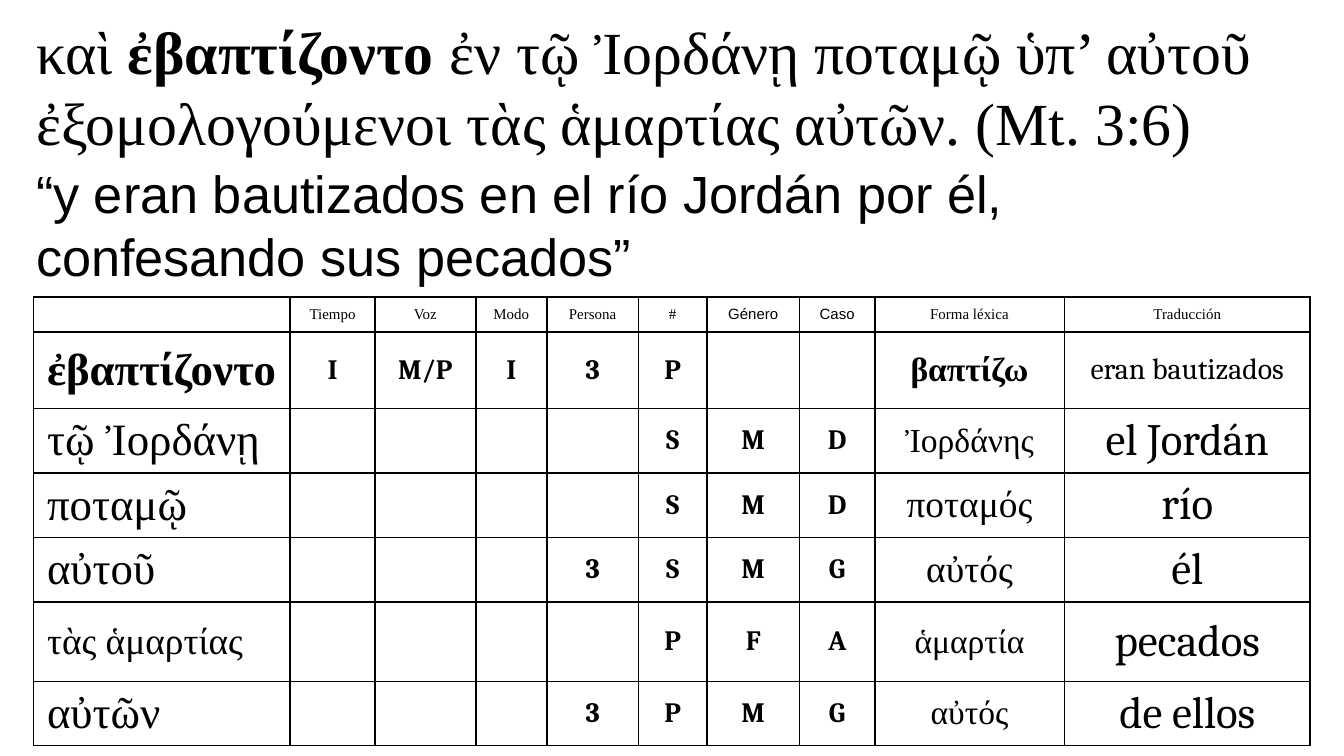
from lxml import etree
from pptx import Presentation
from pptx.dml.color import RGBColor
from pptx.enum import text
from pptx.oxml.ns import qn
from pptx.util import Inches, Pt

BLACK = RGBColor(0x00, 0x00, 0x00)
SERIF, SANS, BOOK = "Times New Roman", "Arial", "Cambria"

COLUMN_WIDTHS = [1.91, 0.63, 0.75, 0.53, 0.68, 0.51, 0.69, 0.56, 1.41, 1.83]
ROW_HEIGHTS = [0.26, 0.57, 0.43, 0.43, 0.43, 0.59, 0.43]
HEADERS = ["", "Tiempo", "Voz", "Modo", "Persona", "#", "Género", "Caso",
           "Forma léxica", "Traducción"]
SANS_HEADERS = ("Género", "Caso")

# Word, its size, parsing codes, lexical form, its size, translation, its size
WORDS = [
    ("ἐβαπτίζοντο", 24, ["I", "M/P", "I", "3", "P", "", ""], "βαπτίζω", 18, "eran bautizados", 16),
    ("τῷ Ἰορδάνῃ", 24, ["", "", "", "", "S", "M", "D"], "Ἰορδάνης", 18, "el Jordán", 24),
    ("ποταμῷ", 24, ["", "", "", "", "S", "M", "D"], "ποταμός", 20, "río", 24),
    ("αὐτοῦ", 24, ["", "", "", "3", "S", "M", "G"], "αὐτός", 20, "él", 24),
    ("τὰς ἁμαρτίας", 20, ["", "", "", "", "P", "F", "A"], "ἁμαρτία", 18, "pecados", 24),
    ("αὐτῶν", 24, ["", "", "", "3", "P", "M", "G"], "αὐτός", 18, "de ellos", 24),
]


def add_run(paragraph, content, size, font, bold=False):
    run = paragraph.add_run()
    run.text = content
    run.font.size = Pt(size)
    run.font.name = font
    run.font.bold = bold
    run.font.color.rgb = BLACK


def add_text_box(slide, top, height, anchor, paragraphs):
    """Add a full-width box; each paragraph is a list of add_run arguments."""
    box = slide.shapes.add_textbox(Inches(0.17), Inches(top), Inches(9.67), Inches(height))
    frame = box.text_frame
    frame.word_wrap = True
    frame.vertical_anchor = anchor
    for index, runs in enumerate(paragraphs):
        paragraph = frame.add_paragraph() if index else frame.paragraphs[0]
        for run in runs:
            add_run(paragraph, *run)


def set_borders(cell, widths):
    """Draw left, right, top and bottom borders, with widths in points."""
    properties = cell._tc.get_or_add_tcPr()
    for position, (side, width) in enumerate(zip("LRTB", widths)):
        line = etree.Element(qn(f"a:ln{side}"), w=str(Pt(width)))
        fill = etree.SubElement(line, qn("a:solidFill"))
        etree.SubElement(fill, qn("a:srgbClr"), val=str(BLACK))
        properties.insert(position, line)


def fill_cell(cell, content, size, font, bold=False, alignment=text.PP_ALIGN.CENTER):
    cell.fill.background()
    cell.vertical_anchor = text.MSO_ANCHOR.MIDDLE
    cell.margin_left = cell.margin_right = Inches(0.1)
    cell.margin_top = cell.margin_bottom = Inches(0.04)
    paragraph = cell.text_frame.paragraphs[0]
    paragraph.alignment = alignment
    if content:
        add_run(paragraph, content, size, font, bold)
    else:
        end = etree.SubElement(paragraph._p, qn("a:endParaRPr"))
        end.set("sz", str(size * 100))


def table_rows():
    """Return the rows of the table as lists of fill_cell arguments."""
    rows = [[(name, 8, SANS if name in SANS_HEADERS else SERIF) for name in HEADERS]]
    for index, (word, word_size, codes, lexeme, lexeme_size, meaning, meaning_size) in enumerate(WORDS):
        is_verb = index == 0
        rows.append([
            (word, word_size, SERIF, is_verb, text.PP_ALIGN.LEFT),
            *[(code, 15, BOOK, True) for code in codes],
            (lexeme, lexeme_size, SERIF, is_verb),
            (meaning, meaning_size, BOOK),
        ])
    return rows


def add_parsing_table(slide):
    table = slide.shapes.add_table(
        len(ROW_HEIGHTS), len(COLUMN_WIDTHS), Inches(0.25), Inches(2.21),
        Inches(sum(COLUMN_WIDTHS)), Inches(sum(ROW_HEIGHTS))).table
    table.first_row = False
    table.horz_banding = False
    for column, width in zip(table.columns, COLUMN_WIDTHS):
        column.width = Inches(width)
    for row, height in zip(table.rows, ROW_HEIGHTS):
        row.height = Inches(height)
    for row_index, cells in enumerate(table_rows()):
        top_width = 0.75 if row_index else 1
        for column_index, content in enumerate(cells):
            cell = table.cell(row_index, column_index)
            fill_cell(cell, *content)
            set_borders(cell, (1, 1, top_width, 0.75))


def main():
    presentation = Presentation()
    presentation.slide_width = Inches(10)
    presentation.slide_height = presentation.slide_width * 9 // 16
    slide = presentation.slides.add_slide(presentation.slide_layouts[6])

    add_text_box(slide, 0.05, 1.18, text.MSO_ANCHOR.MIDDLE, [[
        ("καὶ ", 32, SERIF),
        ("ἐβαπτίζοντο", 32, SERIF, True),
        (" ἐν τῷ Ἰορδάνῃ ποταμῷ ὑπ’ αὐτοῦ ἐξομολογούμενοι τὰς ἁμαρτίας αὐτῶν. (Mt. 3:6)",
         32, SERIF),
    ]])
    add_parsing_table(slide)
    add_text_box(slide, 1.15, 1.04, text.MSO_ANCHOR.TOP, [
        [("“y eran bautizados en el río Jordán por él,", 28, SANS)],
        [("confesando sus pecados”", 28, SANS)],
    ])
    presentation.save("out.pptx")


if __name__ == "__main__":
    main()
